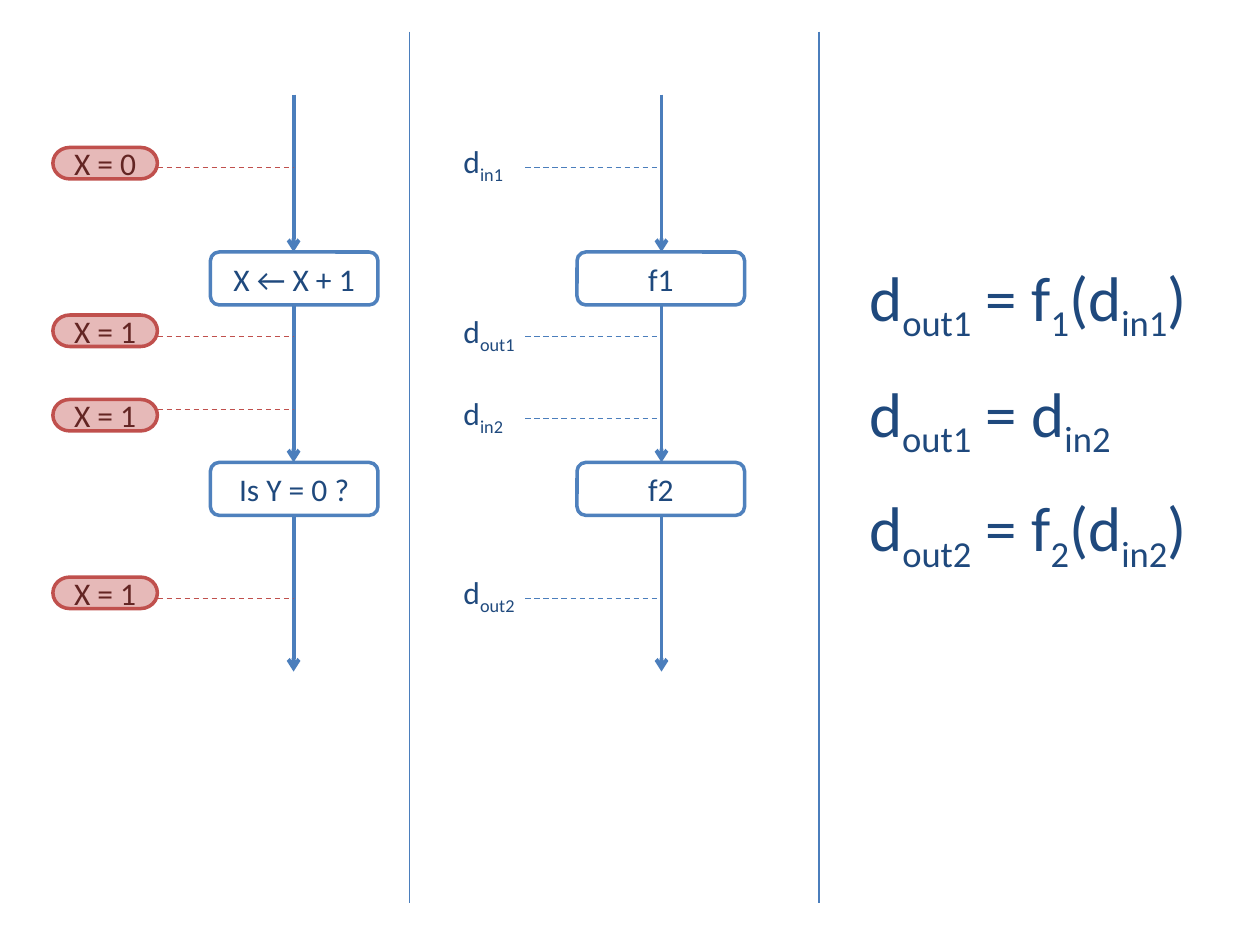
from pptx import Presentation
from pptx.dml.color import RGBColor
from pptx.enum import dml, shapes, text
from pptx.oxml.ns import qn
from pptx.util import Inches, Pt
from lxml import etree

COLORS = {
    "navy": "1F497D",
    "blue": "4B7EBC",
    "box": "4F81BD",
    "red": "C0504D",
    "pink": "E6B9B8",
    "maroon": "632523",
}
FONT = "Calibri"
FLOW_TOPS = (0.75, 2.42, 4.09)
FLOW_ENDS = (2, 3.67, 5.33)


def color(name):
    return RGBColor.from_string(COLORS[name])


def write(frame, content, size=18, ink="navy", align=text.PP_ALIGN.LEFT):
    """Fill a frame; pieces between | marks are subscripts."""
    paragraph = frame.paragraphs[0]
    paragraph.alignment = align
    for index, piece in enumerate(content.split("|")):
        if not piece:
            continue
        run = paragraph.add_run()
        run.text = piece
        run.font.name = FONT
        run.font.size = Pt(size)
        run.font.color.rgb = color(ink)
        if index % 2:
            run.font._element.set("baseline", "-25000")


class FlowSlide:
    def __init__(self, presentation):
        self.slide = presentation.slides.add_slide(presentation.slide_layouts[6])

    def line(self, start, end, ink="blue", width=0.75, dashed=False, arrow=False):
        points = [Inches(value) for value in (*start, *end)]
        connector = self.slide.shapes.add_connector(
            shapes.MSO_CONNECTOR.STRAIGHT, *points)
        connector.line.color.rgb = color(ink)
        connector.line.width = Pt(width)
        if dashed:
            connector.line.dash_style = dml.MSO_LINE.DASH
        if arrow:
            outline = connector.line._get_or_add_ln()
            etree.SubElement(outline, qn("a:tailEnd"), type="arrow")
        etree.SubElement(connector._element.spPr, qn("a:effectLst"))

    def shape(self, kind, box, content, outline, ink, fill=None):
        shape = self.slide.shapes.add_shape(kind, *map(Inches, box))
        shape.shadow.inherit = False
        if fill:
            shape.fill.solid()
            shape.fill.fore_color.rgb = color(fill)
        else:
            shape.fill.background()
        shape.line.color.rgb = color(outline)
        shape.line.width = Pt(2)
        shape.text_frame.vertical_anchor = text.MSO_ANCHOR.MIDDLE
        write(shape.text_frame, content, ink=ink, align=text.PP_ALIGN.CENTER)

    def label(self, box, content, size=18):
        frame = self.slide.shapes.add_textbox(*map(Inches, box)).text_frame
        frame.word_wrap = False
        frame.auto_size = text.MSO_AUTO_SIZE.SHAPE_TO_FIT_TEXT
        write(frame, content, size=size)

    def flow(self, x, box_left, steps):
        """Draw a column of arrows with a step box between each pair."""
        for top, end in zip(FLOW_TOPS, FLOW_ENDS):
            self.line((x, top), (x, end), width=2.25, arrow=True)
        for top, step in zip(FLOW_ENDS, steps):
            self.shape(shapes.MSO_SHAPE.ROUNDED_RECTANGLE,
                       (box_left, top, 1.33, 0.42), step, "box", "navy")

    def state(self, top, line_y, content):
        self.line((1.25, line_y), (2.33, line_y), ink="red", dashed=True)
        self.shape(shapes.MSO_SHAPE.FLOWCHART_TERMINATOR,
                   (0.42, top, 0.83, 0.25), content, "red", "maroon", "pink")

    def value(self, top, line_y, width, content):
        self.line((4.17, line_y), (5.25, line_y), dashed=True)
        self.label((3.58, top, width, 0.4), content)


def main():
    presentation = Presentation()
    presentation.slide_width = Inches(10)
    presentation.slide_height = Inches(7.5)
    page = FlowSlide(presentation)

    for x in (3.25, 6.5):
        page.line((x, 0.25), (x, 7.17))

    page.flow(2.33, 1.67, ("X ← X + 1", "Is Y = 0 ?"))
    for top, line_y, content in (
        (1.17, 1.33, "X = 0"),
        (2.5, 2.67, "X = 1"),
        (3.17, 3.25, "X = 1"),
        (4.58, 4.75, "X = 1"),
    ):
        page.state(top, line_y, content)

    page.flow(5.25, 4.58, ("f1", "f2"))
    for top, line_y, width, content in (
        (1.08, 1.33, 0.55, "d|in1|"),
        (2.43, 2.67, 0.65, "d|out1|"),
        (3.08, 3.32, 0.55, "d|in2|"),
        (4.5, 4.75, 0.65, "d|out2|"),
    ):
        page.value(top, line_y, width, content)

    for top, width, equation in (
        (2, 2.99, "d|out1| = f|1|(d|in1|)"),
        (2.92, 2.27, "d|out1| = d|in2|"),
        (3.83, 2.99, "d|out2| = f|2|(d|in2|)"),
    ):
        page.label((6.8, top, width, 0.71), equation, size=36)

    presentation.save("out.pptx")


if __name__ == "__main__":
    main()
